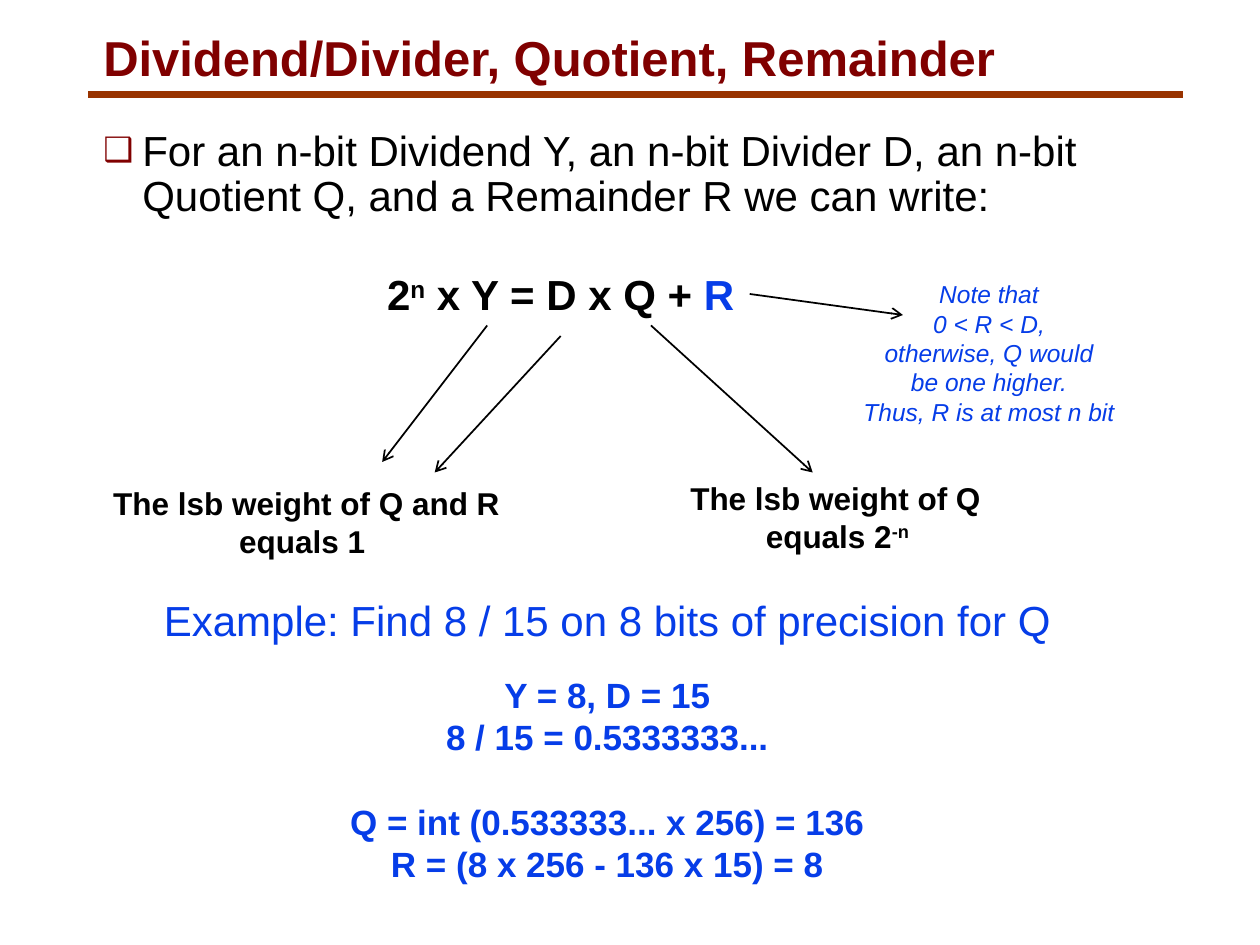
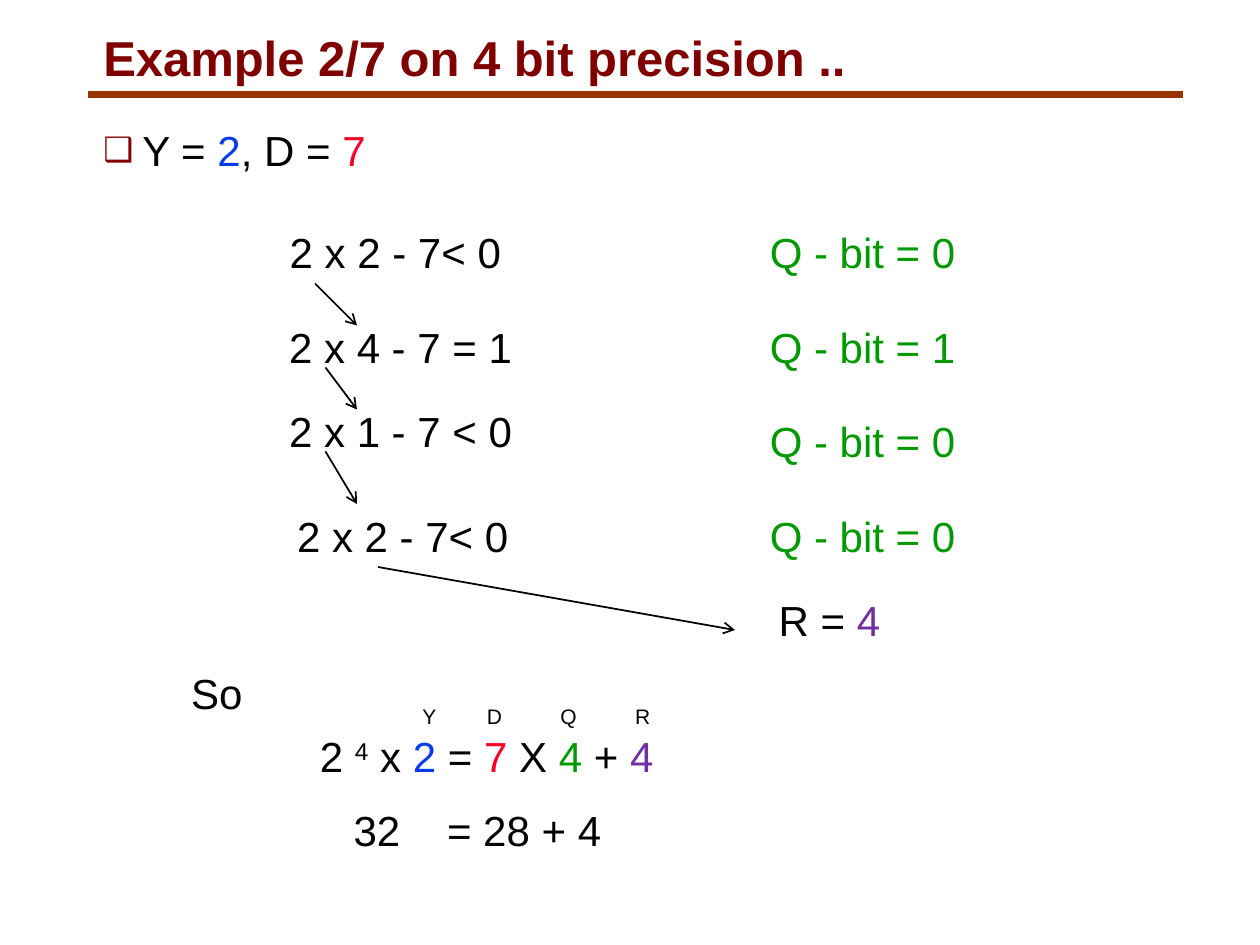
from dataclasses import dataclass

from lxml import etree
from pptx import Presentation
from pptx.dml.color import RGBColor
from pptx.enum.shapes import MSO_CONNECTOR
from pptx.enum.text import MSO_AUTO_SIZE, PP_ALIGN
from pptx.oxml.ns import qn
from pptx.util import Inches, Pt

STRAIGHT = MSO_CONNECTOR.STRAIGHT
GROW = MSO_AUTO_SIZE.SHAPE_TO_FIT_TEXT
LEFT, CENTER = PP_ALIGN.LEFT, PP_ALIGN.CENTER
RIGHT_SIDE = 3

PAGE_WIDTH, PAGE_HEIGHT = Inches(10), Inches(7.5)
COLUMNS, ROWS = 120, 90
FONT = "Arial"
BLACK, BLUE, RED = "000000", "063DE8", "FC0128"
GREEN, PURPLE = "009900", "7030A0"
MAROON, RULE_BROWN = "800000", "993300"


@dataclass
class Span:
    """A piece of text with its own colour and raised by a share of its size."""
    text: str
    color: str = ""
    raised: int = 0


def rgb(color):
    """Turn a hex string into a colour."""
    return RGBColor.from_string(color)


def across(columns):
    """Length of a number of grid columns."""
    return round(PAGE_WIDTH * columns / COLUMNS)


def down(rows):
    """Length of a number of grid rows."""
    return round(PAGE_HEIGHT * rows / ROWS)


def add_span(para, span, size, color, bold, italic):
    """Add one run to a paragraph."""
    run = para.add_run()
    run.text = span.text
    font = run.font
    font.name, font.size, font.bold, font.italic = FONT, Pt(size), bold, italic
    font.color.rgb = rgb(span.color or color)
    if span.raised:
        run._r.get_or_add_rPr().set("baseline", str(span.raised * 1000))


def add_text(page, place, lines, size=24, color=BLACK, bold=False,
             italic=False, align=CENTER, wrap=False):
    """Add a text box; each line is a string or a list of spans."""
    left, top, width, height = place
    box = page.shapes.add_textbox(across(left), down(top), across(width), down(height))
    frame = box.text_frame
    frame.word_wrap, frame.auto_size = wrap, GROW
    for index, line in enumerate(lines):
        para = frame.add_paragraph() if index else frame.paragraphs[0]
        para.alignment = align
        for span in [Span(line)] if isinstance(line, str) else line:
            add_span(para, span, size, color, bold, italic)
    return box


def add_line(page, start, end, color=BLACK, width=1):
    """Draw a straight line between two grid points."""
    line = page.shapes.add_connector(
        STRAIGHT, across(start[0]), down(start[1]), across(end[0]), down(end[1]))
    line.line.color.rgb = rgb(color)
    line.line.width = Pt(width)
    etree.SubElement(line._element.spPr, qn("a:effectLst"))
    return line


def add_arrow(page, start, end):
    """Draw a thin line with an open arrowhead at its end."""
    arrow = add_line(page, start, end)
    etree.SubElement(arrow.line._get_or_add_ln(), qn("a:tailEnd"), type="arrow")
    return arrow


def tighten(box, spacing):
    """Give a heading or bullet box narrow margins and close lines."""
    frame = box.text_frame
    frame.margin_left = frame.margin_right = Inches(0.07)
    frame.margin_top = frame.margin_bottom = Inches(0.03)
    frame.paragraphs[0].line_spacing = spacing


def add_bullet(page, line, height):
    """Add the opening point with a hollow square bullet."""
    box = add_text(page, (9, 12, 103, height), [line], align=LEFT, wrap=True)
    tighten(box, 0.9)
    settings = box.text_frame.paragraphs[0]._p.get_or_add_pPr()
    indent = Inches(0.31)
    settings.set("marL", str(indent))
    settings.set("indent", str(-indent))
    bullet_color = etree.SubElement(settings, qn("a:buClr"))
    etree.SubElement(bullet_color, qn("a:srgbClr"), val=MAROON)
    etree.SubElement(settings, qn("a:buSzPct"), val="80000")
    etree.SubElement(settings, qn("a:buFont"), typeface=FONT)
    etree.SubElement(settings, qn("a:buChar"), char="❑")


def add_tab_stop(para, columns):
    """Set a left tab stop in a paragraph."""
    stops = etree.SubElement(para._p.get_or_add_pPr(), qn("a:tabLst"))
    etree.SubElement(stops, qn("a:tab"), pos=str(across(columns)), algn="l")


def add_page(deck, title, title_width):
    """Add a blank page with its title and the rule below it."""
    page = deck.slides.add_slide(deck.slide_layouts[6])
    add_line(page, (8.4, 9), (112.7, 9), RULE_BROWN, 4.5)
    heading = add_text(page, (9, 3, title_width, 5.6), [title], 28, MAROON,
                       bold=True, align=LEFT)
    tighten(heading, 0.87)
    return page


def build_division_page(deck):
    """Explain the division identity and a worked example."""
    page = add_page(deck, "Dividend/Divider, Quotient, Remainder", 87.8)
    add_bullet(page, "For an n-bit Dividend Y, an n-bit Divider D, an n-bit "
                     "Quotient Q, and a Remainder R we can write:", 9.4)
    identity = add_text(page, (35.4, 25, 36, 6), [
        [Span("2"), Span("n", raised=30), Span(" x Y = D x Q + "), Span("R", BLUE)],
    ], bold=True)
    add_text(page, (64.4, 45, 31.2, 8.5), [
        "The lsb weight of Q ", [Span("equals 2"), Span("-n ", raised=30)],
    ], 18, bold=True)
    add_text(page, (9.4, 45.5, 39.6, 8.5),
             ["The lsb weight of Q and R", "equals 1 "], 18, bold=True)
    for start, end in (((62, 31), (77.4, 45)), ((53.4, 32), (41.4, 45)),
                       ((46.4, 31), (36.4, 44))):
        add_arrow(page, start, end)
    add_arrow(page, (71.4, 28), (86, 30)).begin_connect(identity, RIGHT_SIDE)
    add_text(page, (81, 26, 26.4, 15.4), [
        "Note that", "0 < R < D,", "otherwise, Q would", "be one higher.",
        "Thus, R is at most n bit",
    ], 14, BLUE, italic=True)
    add_text(page, (14, 56, 87.7, 6),
             ["Example: Find 8 / 15 on 8 bits of precision for Q"], color=BLUE)
    example = add_text(page, (32, 63.6, 51.7, 21.4), [
        "Y = 8, D = 15", "8 / 15 = 0.5333333...",
        "Q = int (0.533333... x 256) = 136", "R = (8 x 256 - 136 x 15) = 8",
    ], 20, BLUE, bold=True)
    example.text_frame.paragraphs[2].space_before = Pt(24)


def build_steps_page(deck):
    """Work through two sevenths bit by bit."""
    page = add_page(deck, "Example 2/7 on 4 bit precision ..", 73.2)
    add_bullet(page, [Span("Y = "), Span("2", BLUE), Span(", D = "), Span("7", RED)], 5)

    steps = (("2 x 2 - 7< 0", 26.3, 21, 22.7), ("2 x 4 - 7 = 1", 26.2, 30, 23.9),
             ("2 x 1 - 7 < 0", 26.2, 38, 23.9), ("2 x 2 - 7< 0", 27, 48, 22.7))
    for text, left, top, width in steps:
        add_text(page, (left, top, width, 6), [text])
    for index, bit in enumerate("0100"):
        add_text(page, (72, 21 + 9 * index, 20.3, 6), [f"Q - bit = {bit}"], color=GREEN)
    for start, end in (((30, 27), (34, 31)), ((31, 35), (34, 39)),
                       ((31, 43), (34, 48)), ((36, 54), (70, 60))):
        add_arrow(page, start, end)
    add_text(page, (72.9, 56, 12.2, 6), [[Span("R = "), Span("4", PURPLE)]])

    add_text(page, (17, 63, 7.3, 6), ["So"])
    for label, left in (("Y", 39), ("D", 45.2), ("Q", 52.2), ("R", 59.3)):
        add_text(page, (left, 66.4, 3.8, 3.6), [label], 12)
    add_text(page, (29, 69, 34.7, 6), [[
        Span("2 "), Span("4", raised=30), Span(" x "), Span("2", BLUE), Span(" = "),
        Span("7", RED), Span(" X "), Span("4", GREEN), Span(" + "), Span("4", PURPLE),
    ]])
    check = add_text(page, (32.5, 76, 28, 6), ["32\t= 28 + 4"], align=LEFT, wrap=True)
    add_tab_stop(check.text_frame.paragraphs[0], 8.9)


def main():
    """Build the deck and save it."""
    deck = Presentation()
    deck.slide_width, deck.slide_height = PAGE_WIDTH, PAGE_HEIGHT
    build_division_page(deck)
    build_steps_page(deck)
    deck.save("out.pptx")


if __name__ == "__main__":
    main()
